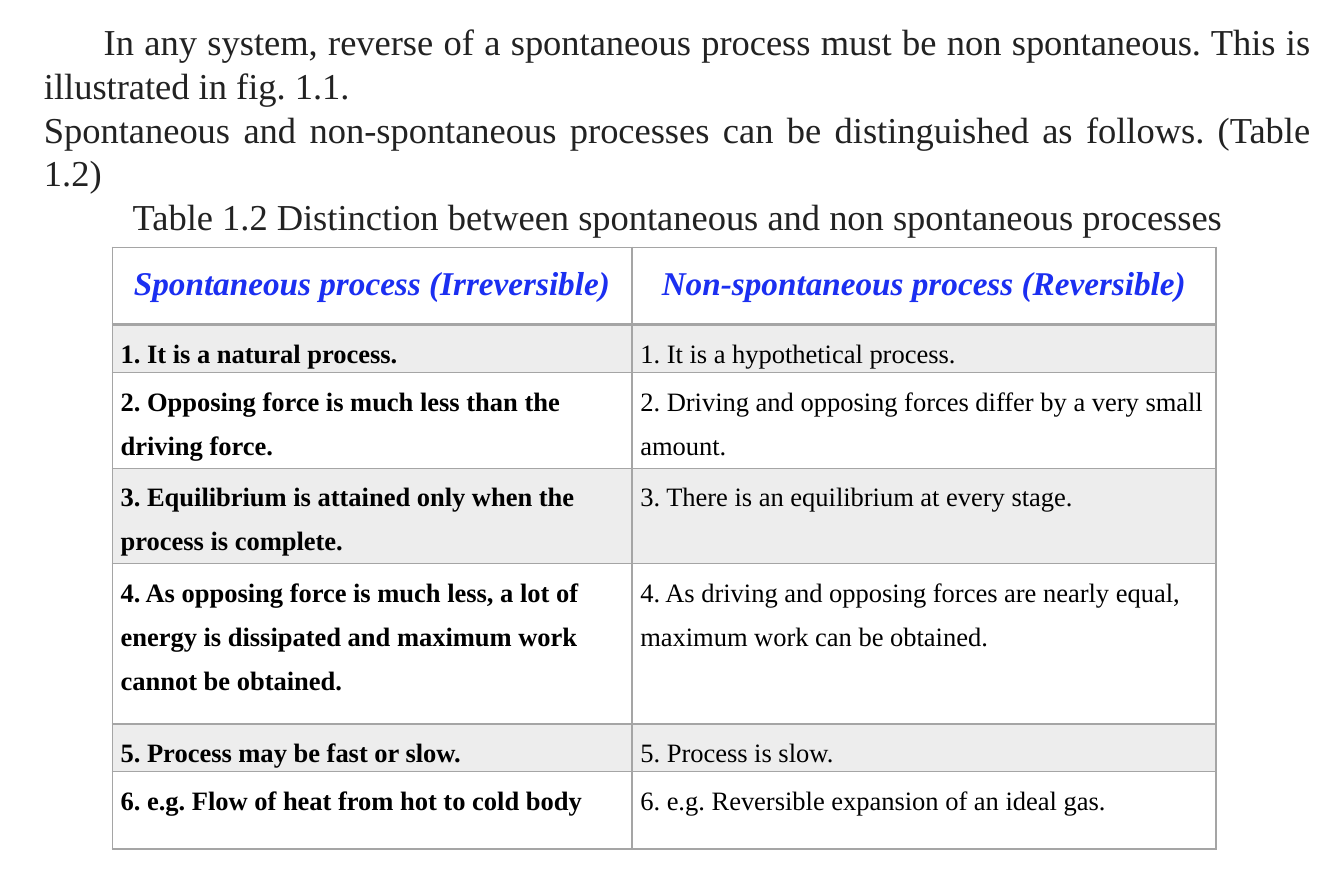
from lxml.etree import SubElement
from pptx import Presentation
from pptx.dml.color import RGBColor
from pptx.enum.text import PP_ALIGN
from pptx.oxml.ns import qn
from pptx.util import Inches, Pt

FONT = "Times New Roman"
INK, BLACK, BLUE = "222222", "000000", "1B2FF1"
GRAY, BAND, WHITE = "A5A5A5", "EDEDED", "FFFFFF"

INTRODUCTION = [
    ("In any system, reverse of a spontaneous process must be non spontaneous. "
     "This is illustrated in fig. 1.1.", PP_ALIGN.JUSTIFY, 0.5),
    ("Spontaneous and non-spontaneous processes can be distinguished as follows. "
     "(Table 1.2)", PP_ALIGN.JUSTIFY, 0),
    ("Table 1.2 Distinction between spontaneous and non spontaneous processes",
     PP_ALIGN.CENTER, 0),
]
COLUMN_WIDTHS = [4.35, 4.89]
COMPARISON = [
    (0.65, "Spontaneous process (Irreversible)", "Non-spontaneous process (Reversible)"),
    (0.4, "1. It is a natural process.", "1. It is a hypothetical process."),
    (0.8, "2. Opposing force is much less than the driving force.",
     "2. Driving and opposing forces differ by a very small amount."),
    (0.8, "3. Equilibrium is attained only when the process is complete.",
     "3. There is an equilibrium at every stage."),
    (1.34, "4. As opposing force is much less, a lot of energy is dissipated "
     "and maximum work cannot be obtained.",
     "4. As driving and opposing forces are nearly equal, maximum work can be obtained."),
    (0.4, "5. Process may be fast or slow.", "5. Process is slow."),
    (0.65, "6. e.g. Flow of heat from hot to cold body",
     "6. e.g. Reversible expansion of an ideal gas."),
]


def color(value):
    """Turn a hex string into a colour."""
    return RGBColor.from_string(value)


def set_font(paragraph, size, ink, bold=False, italic=False):
    """Set the font of a whole paragraph."""
    font = paragraph.font
    font.name, font.size = FONT, Pt(size)
    font.bold, font.italic = bold, italic
    font.color.rgb = color(ink)


def set_borders(cell, widths):
    """Draw gray cell borders, with widths in points by side."""
    properties = cell._tc.get_or_add_tcPr()
    for side, width in widths.items():
        line = SubElement(properties, qn(f"a:ln{side}"), w=str(Pt(width)))
        fill = SubElement(line, qn("a:solidFill"))
        SubElement(fill, qn("a:srgbClr"), val=GRAY)


def add_introduction(slide, left, top, width, height):
    """Place the opening paragraphs and the table caption."""
    box = slide.shapes.add_textbox(left, top, width, height)
    frame = box.text_frame
    frame.word_wrap = True
    for index, (text, alignment, indent) in enumerate(INTRODUCTION):
        paragraph = frame.add_paragraph() if index else frame.paragraphs[0]
        paragraph.text = text
        paragraph.alignment = alignment
        if indent:
            paragraph._p.get_or_add_pPr().set("indent", str(Inches(indent)))
        set_font(paragraph, 22, INK)


def fill_cell(cell, text, row, column):
    """Write and format one cell of the comparison."""
    header = row == 0
    cell.margin_left = cell.margin_right = Inches(0.07)
    cell.margin_top = cell.margin_bottom = 0
    cell.text = text
    paragraph = cell.text_frame.paragraphs[0]
    paragraph.line_spacing = 1.5
    paragraph.alignment = PP_ALIGN.CENTER if header else PP_ALIGN.LEFT
    set_font(paragraph, 20 if header else 16, BLUE if header else BLACK,
             bold=header or column == 0, italic=header)
    set_borders(cell, {"L": 1, "R": 1, "T": 2 if row == 1 else 1, "B": 2 if header else 1})
    cell.fill.solid()
    cell.fill.fore_color.rgb = color(BAND if row % 2 else WHITE)


def add_comparison(slide, left, top, width, height):
    """Place the table of spontaneous and non-spontaneous processes."""
    frame = slide.shapes.add_table(len(COMPARISON), len(COLUMN_WIDTHS), left, top, width, height)
    table = frame.table
    for column, share in zip(table.columns, COLUMN_WIDTHS):
        column.width = int(width * share / sum(COLUMN_WIDTHS))
    total = sum(height_share for height_share, *_ in COMPARISON)
    for row, (height_share, *texts) in enumerate(COMPARISON):
        table.rows[row].height = int(height * height_share / total)
        for column, text in enumerate(texts):
            fill_cell(table.cell(row, column), text, row, column)


def main():
    """Build the slide and save it."""
    presentation = Presentation()
    presentation.slide_width, presentation.slide_height = Inches(11.25), Inches(7.5)
    slide = presentation.slides.add_slide(presentation.slide_layouts[6])
    add_introduction(slide, Inches(0.27), Inches(0.11), Inches(10.8), Inches(6.16))
    add_comparison(slide, Inches(0.94), Inches(2.07), Inches(9.24), Inches(5.04))
    presentation.save("out.pptx")


if __name__ == "__main__":
    main()
